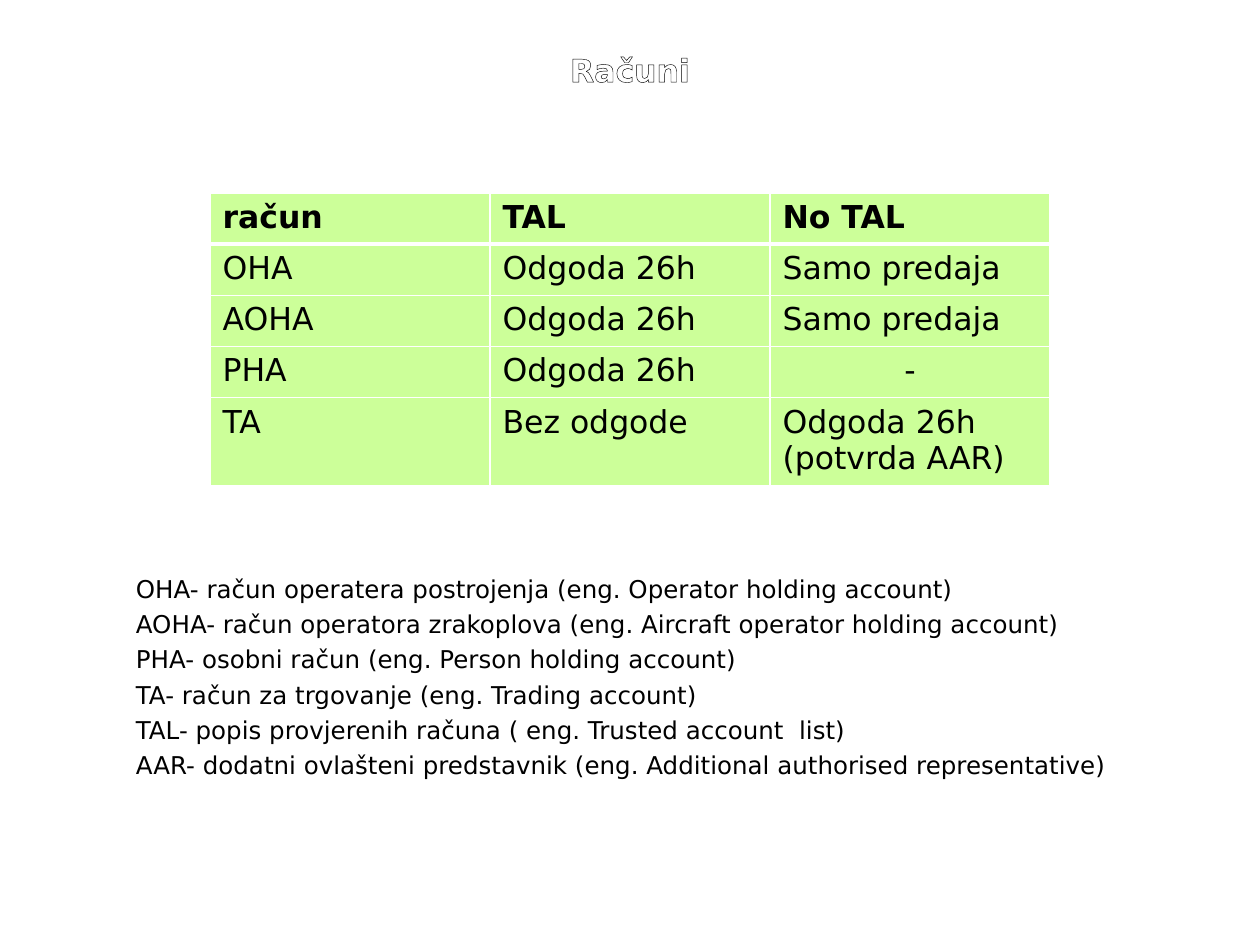
from lxml.etree import SubElement
from pptx import Presentation
from pptx.dml.color import RGBColor as RGB
from pptx.enum.text import MSO_ANCHOR as ANCHOR, PP_ALIGN as ALIGN
from pptx.oxml import parse_xml
from pptx.oxml.ns import nsdecls, qn
from pptx.util import Inches, Pt

COLORS = {"text": "000000", "title": "FFFFFF", "cell": "CCFF99", "border": "FFFFFF"}
FONT = "DejaVu Sans"
WIDTH, HEIGHT = Inches(10), Inches(7.5)

ACCOUNTS = [
    ("račun", "TAL", "No TAL"),
    ("OHA", "Odgoda 26h", "Samo predaja"),
    ("AOHA", "Odgoda 26h", "Samo predaja"),
    ("PHA", "Odgoda 26h", "-"),
    ("TA", "Bez odgode", "Odgoda 26h (potvrda AAR)"),
]
GLOSSARY = [
    "OHA- račun operatera postrojenja (eng. Operator holding account)",
    "AOHA- račun operatora zrakoplova (eng. Aircraft operator holding account)",
    "PHA- osobni račun (eng. Person holding account)",
    "TA- račun za trgovanje (eng. Trading account)",
    "TAL- popis provjerenih računa ( eng. Trusted account  list)",
    "AAR- dodatni ovlašteni predstavnik (eng. Additional authorised representative)",
]


def share(left, top, width, height):
    """Turn shares of the slide's size into a box."""
    return (int(left * WIDTH), int(top * HEIGHT),
            int(width * WIDTH), int(height * HEIGHT))


def style(paragraph, size, color="text", bold=False):
    for run in paragraph.runs:
        font = run.font
        font.name, font.size, font.bold = FONT, Pt(size), bold
        font.color.rgb = RGB.from_string(COLORS[color])


def line_xml(tag, color, points):
    return parse_xml(
        f'<a:{tag} {nsdecls("a")} w="{Pt(points)}"><a:solidFill>'
        f'<a:srgbClr val="{COLORS[color]}"/></a:solidFill></a:{tag}>')


def add_text(slide, box):
    frame = slide.shapes.add_textbox(*box).text_frame
    frame.word_wrap = True
    frame.vertical_anchor = ANCHOR.TOP
    return frame


def add_title(slide, box):
    frame = add_text(slide, box)
    frame.margin_top = Inches(0.08)
    frame.text = "Računi"
    title = frame.paragraphs[0]
    title.alignment = ALIGN.CENTER
    style(title, 18, "title", bold=True)
    # Outlined letters
    title.runs[0].font._element.insert(0, line_xml("ln", "text", 1))


def add_accounts(slide, box):
    rows, columns = len(ACCOUNTS), len(ACCOUNTS[0])
    table = slide.shapes.add_table(rows, columns, *box).table
    # The last row holds two lines of text, the others share the rest
    row_height = int(box[3] * 0.175)
    for row in table.rows:
        row.height = row_height
    table.rows[rows - 1].height = box[3] - row_height * (rows - 1)

    for r, values in enumerate(ACCOUNTS):
        for c, value in enumerate(values):
            cell = table.cell(r, c)
            cell.text = value
            entry = cell.text_frame.paragraphs[0]
            style(entry, 18, bold=r == 0)
            if value == "-":
                entry.alignment = ALIGN.CENTER
            # Thin borders, with a thick rule under the header
            widths = {"lnL": 1, "lnR": 1, "lnT": 3 if r == 1 else 1,
                      "lnB": 3 if r == 0 else 1}
            properties = cell._tc.get_or_add_tcPr()
            for tag, points in widths.items():
                properties.append(line_xml(tag, "border", points))
            cell.fill.solid()
            cell.fill.fore_color.rgb = RGB.from_string(COLORS["cell"])


def add_glossary(slide, box):
    frame = add_text(slide, box)
    frame.text = "\n".join(GLOSSARY)
    for i, term in enumerate(frame.paragraphs):
        style(term, 14)
        if i:
            term.space_before = Pt(3.3)


def main():
    deck = Presentation()
    deck.slide_width, deck.slide_height = WIDTH, HEIGHT
    slide = deck.slides.add_slide(deck.slide_layouts[6])
    add_accounts(slide, share(1 / 6, 0.204, 2 / 3, 0.31))
    add_title(slide, share(0.075, 0.043, 0.85, 0.105))
    add_glossary(slide, share(0.098, 0.601, 0.802, 0.225))
    deck.save("out.pptx")


if __name__ == "__main__":
    main()
